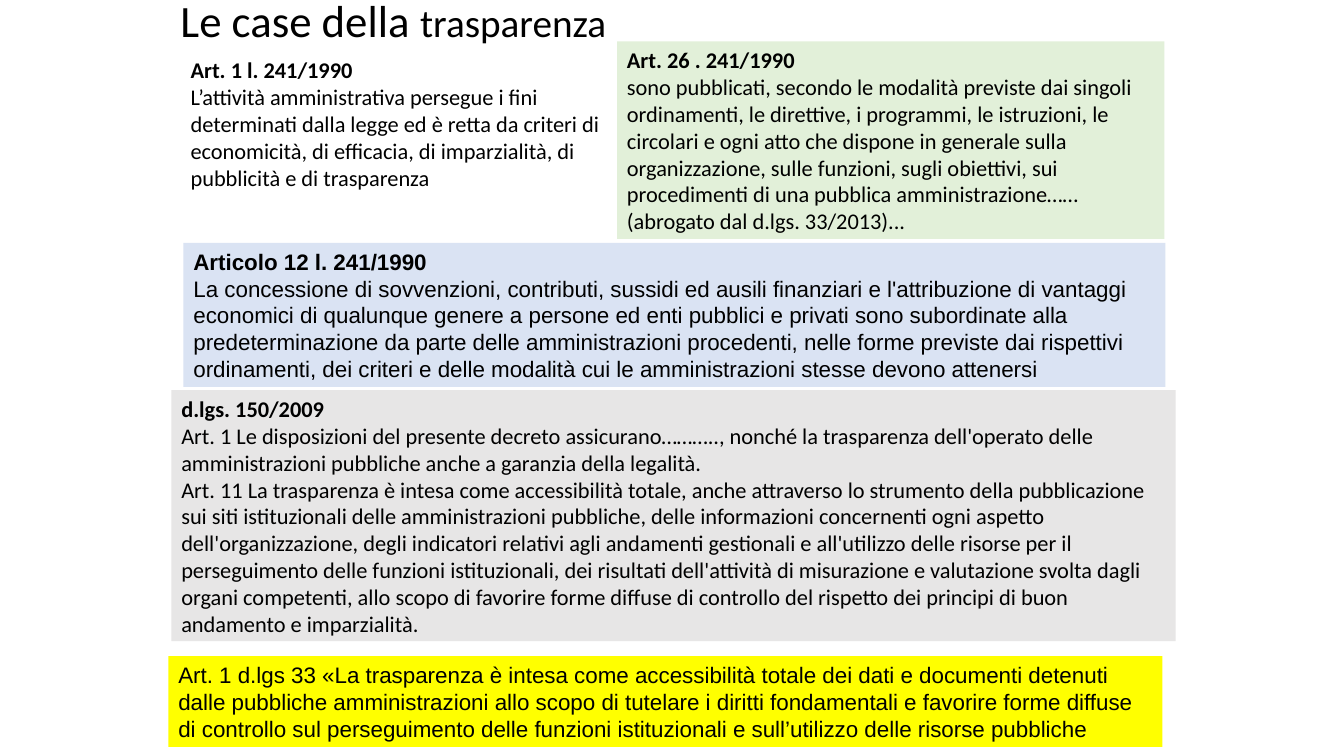
from pptx import Presentation, util as u
from pptx.dml.color import RGBColor
from pptx.enum import shapes, text
from pptx.oxml.ns import qn


def color(code):
    return RGBColor.from_string(code)


class Deck:
    """Holds the text style and the current slide."""
    ink = "000000"
    size = 16

    def __init__(self, prs):
        self.slide = prs.slides.add_slide(prs.slide_layouts[1])

    def place(self, shape, box):
        for name, val in zip(("left", "top", "width", "height"), box):
            setattr(shape, name, u.Inches(val))

    def frame(self, shape, anchor):
        form = {"word_wrap": True, "auto_size": text.MSO_AUTO_SIZE.NONE,
                "vertical_anchor": anchor,
                "margin_left": u.Inches(0.1), "margin_right": u.Inches(0.1),
                "margin_top": u.Inches(0.05), "margin_bottom": u.Inches(0.05)}
        for name, val in form.items():
            setattr(shape.text_frame, name, val)
        return shape.text_frame

    def label(self, para, words, font, size, bold=False):
        run = para.add_run()
        run.text = words
        form = {"name": font, "size": u.Pt(size), "bold": bold}
        for name, val in form.items():
            setattr(run.font, name, val)
        run.font.color.rgb = color(self.ink)

    def para(self, frame, first):
        para = frame.paragraphs[0] if first else frame.add_paragraph()
        form = {"alignment": text.PP_ALIGN.LEFT, "space_before": u.Pt(0),
                "space_after": u.Pt(0)}
        for name, val in form.items():
            setattr(para, name, val)
        return para

    def title(self, box, parts, font="Calibri"):
        shape = self.slide.shapes.title
        self.place(shape, box)
        para = self.para(self.frame(shape, text.MSO_ANCHOR.MIDDLE), True)
        for words, size in parts:
            self.label(para, words, font, size)

    def fill_in(self, shape, head, lines, font):
        frame = self.frame(shape, text.MSO_ANCHOR.TOP)
        rows = ([(head, True)] if head else []) + [(ln, False) for ln in lines]
        for num, (words, bold) in enumerate(rows):
            para = self.para(frame, num == 0)
            para.line_spacing = u.Pt(self.size * 1.2)
            self.label(para, words, font, self.size, bold)
        return frame

    def body(self, box, head, lines, font="Calibri"):
        shape = self.slide.placeholders[1]
        self.place(shape, box)
        # Plain paragraphs: no bullet, no indent
        for para in self.fill_in(shape, head, lines, font).paragraphs:
            props = para._p.get_or_add_pPr()
            props.set("marL", "0")
            props.set("indent", "0")
            props.append(props.makeelement(qn("a:buNone"), {}))

    def panel(self, box, fill, head, lines, font="Calibri"):
        shape = self.slide.shapes.add_shape(
            shapes.MSO_SHAPE.RECTANGLE, *map(u.Inches, box))
        shape.shadow.inherit = False
        shape.fill.solid()
        shape.fill.fore_color.rgb = color(fill)
        shape.line.fill.background()
        self.fill_in(shape, head, lines, font)


def main():
    prs = Presentation()
    prs.slide_width, prs.slide_height = u.Inches(13.33), u.Inches(7.5)
    deck = Deck(prs)

    # Title and opening article
    deck.title((1.69, -0.05, 9, 0.49),
               [("Le case della ", 32), ("trasparenza", 28)])
    deck.body((1.79, 0.51, 4.33, 1.92), "Art. 1 l. 241/1990", [
        "L’attività amministrativa persegue i fini determinati dalla legge ed "
        "è retta da criteri di economicità, di efficacia, di imparzialità, di "
        "pubblicità e di trasparenza"])

    # Coloured panels, one per source of law
    deck.panel((6.12, 0.41, 5.43, 1.96), "E2F0D9", "Art. 26 . 241/1990", [
        "sono pubblicati, secondo le modalità previste dai singoli "
        "ordinamenti, le direttive, i programmi, le istruzioni, le circolari "
        "e ogni atto che dispone in generale sulla organizzazione, sulle "
        "funzioni, sugli obiettivi, sui procedimenti di una pubblica "
        "amministrazione……(abrogato dal d.lgs. 33/2013)..."])
    deck.panel((1.7, 3.87, 9.96, 2.49), "E7E6E6", "d.lgs. 150/2009", [
        "Art. 1 Le disposizioni del presente decreto assicurano……….., nonché "
        "la trasparenza dell'operato delle amministrazioni pubbliche anche a "
        "garanzia della legalità.",
        "Art. 11 La trasparenza è intesa come accessibilità totale, anche "
        "attraverso lo strumento della pubblicazione sui siti istituzionali "
        "delle amministrazioni pubbliche, delle informazioni concernenti ogni "
        "aspetto dell'organizzazione, degli indicatori relativi agli andamenti "
        "gestionali e all'utilizzo delle risorse per il perseguimento delle "
        "funzioni istituzionali, dei risultati dell'attività di misurazione e "
        "valutazione svolta dagli organi competenti, allo scopo di favorire "
        "forme diffuse di controllo del rispetto dei principi di buon "
        "andamento e imparzialità."])
    deck.panel((1.82, 2.41, 9.74, 1.43), "DAE3F3", "Articolo 12 l. 241/1990", [
        "La concessione di sovvenzioni, contributi, sussidi ed ausili "
        "finanziari e l'attribuzione di vantaggi economici di qualunque genere "
        "a persone ed enti pubblici e privati sono subordinate alla "
        "predeterminazione da parte delle amministrazioni procedenti, nelle "
        "forme previste dai rispettivi ordinamenti, dei criteri e delle "
        "modalità cui le amministrazioni stesse devono attenersi"], "Arial")
    deck.panel((1.67, 6.51, 9.86, 0.9), "FFFF00", None, [
        "Art. 1 d.lgs 33 «La trasparenza è intesa come accessibilità totale "
        "dei dati e documenti detenuti dalle pubbliche amministrazioni allo "
        "scopo di tutelare i diritti fondamentali e favorire forme diffuse di "
        "controllo sul perseguimento delle funzioni istituzionali e "
        "sull’utilizzo delle risorse pubbliche"], "Arial")

    prs.save("out.pptx")


if __name__ == "__main__":
    main()
